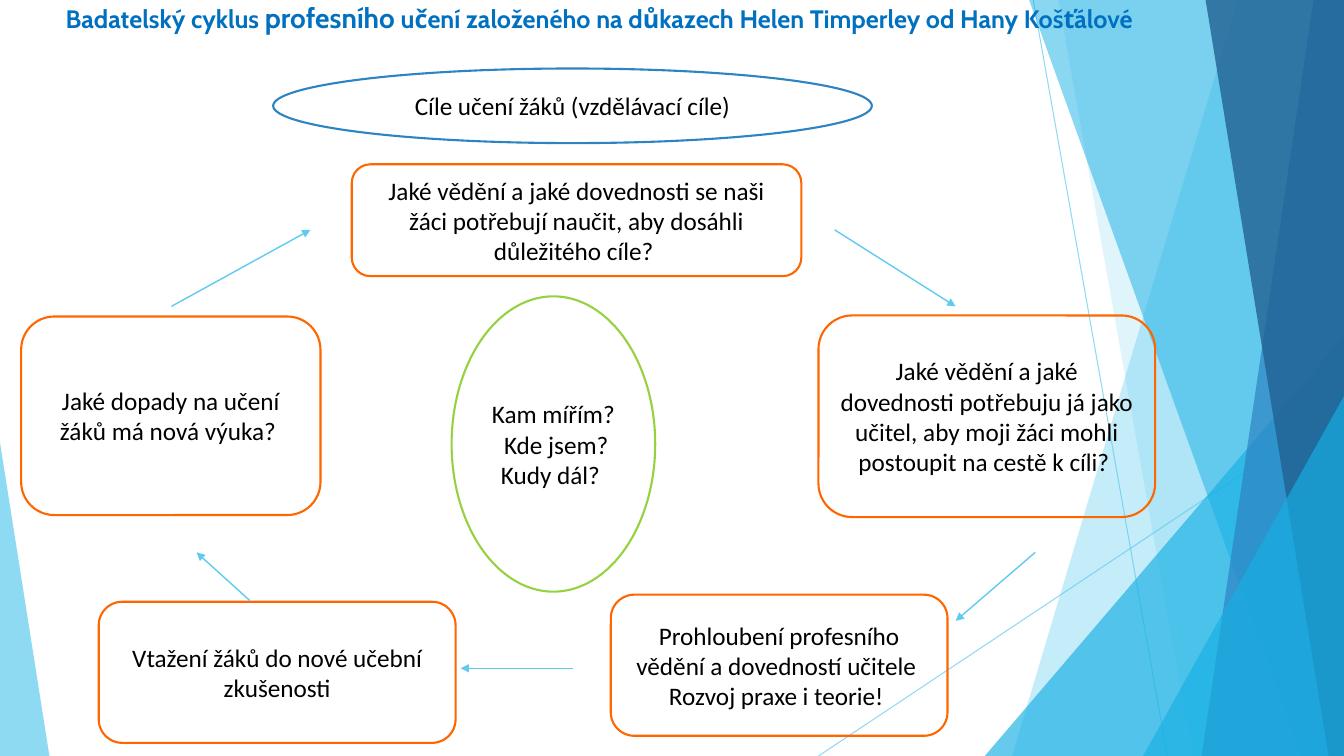
"""Build the slide on the inquiry cycle of evidence-based professional learning."""
from lxml.etree import SubElement
from pptx import Presentation
from pptx.dml.color import RGBColor
from pptx.enum.dml import MSO_LINE_DASH_STYLE as Dash
from pptx.enum.shapes import MSO_CONNECTOR_TYPE as Connector
from pptx.enum.shapes import MSO_AUTO_SHAPE_TYPE as Shape
from pptx.enum.text import MSO_AUTO_SIZE as AutoSize
from pptx.enum.text import MSO_VERTICAL_ANCHOR as Anchor
from pptx.enum.text import PP_PARAGRAPH_ALIGNMENT as Align
from pptx.oxml.ns import qn
from pptx.util import Inches, Pt

CELL = Inches(0.1)
COLUMNS, ROWS = 133.33, 75

WHITE = RGBColor(0xFF, 0xFF, 0xFF)
BLACK = RGBColor(0x00, 0x00, 0x00)
TITLE_BLUE = RGBColor(0x00, 0x70, 0xC0)
SKY = RGBColor(0x5F, 0xCB, 0xEF)
CYAN = RGBColor(0x17, 0xB0, 0xE4)
BLUE = RGBColor(0x2E, 0x83, 0xC3)
NAVY = RGBColor(0x22, 0x62, 0x92)
ORANGE = RGBColor(0xFF, 0x66, 0x00)
GREEN = RGBColor(0x96, 0xD1, 0x41)

BODY_FONT = {"name": "Calibri", "size": Pt(18)}
TITLE_FONT = {"name": "Cabin", "size": Pt(18), "bold": True}
TITLE_RUNS = [
    ("Badatelský cyklus ", {}),
    ("profesního", {"size": Pt(20)}),
    (" učení založeného na důkazech Helen Timperley od Hany Košťálové", {}),
]

FACET_LINES = [((102.5, 0), (115.8, ROWS)), ((COLUMNS, 40.3), (81.2, ROWS))]
FACETS = [
    ([(122.8, 0), (COLUMNS, 0), (COLUMNS, ROWS), (100.4, ROWS)], SKY, 36),
    ([(105, 0), (COLUMNS, 0), (COLUMNS, ROWS), (118.3, ROWS)], SKY, 20),
    ([(COLUMNS, 33.3), (COLUMNS, ROWS), (97.7, ROWS)], CYAN, 66),
    ([(102.1, 0), (COLUMNS, 0), (COLUMNS, ROWS), (129.1, ROWS)], CYAN, 50),
    ([(130.3, 0), (COLUMNS, 0), (COLUMNS, ROWS), (119.2, ROWS)], BLUE, 70),
    ([(119.6, 0), (COLUMNS, 0), (COLUMNS, ROWS), (131.8, ROWS)], NAVY, 80),
    ([(COLUMNS, 39.3), (COLUMNS, ROWS), (113.4, ROWS)], CYAN, 66),
    ([(0, 43.9), (4.9, ROWS), (0, ROWS)], SKY, 70),
]

NODES = [
    (Shape.OVAL, (27.1, 6.8, 59.4, 7.4), BLUE,
     ["Cíle učení žáků (vzdělávací cíle)"]),
    (Shape.ROUNDED_RECTANGLE, (34.9, 16.3, 44.6, 11.1), ORANGE,
     ["Jaké vědění a jaké dovednosti se naši žáci potřebují naučit, "
      "aby dosáhli důležitého cíle? "]),
    (Shape.ROUNDED_RECTANGLE, (81.2, 31.3, 33.4, 20), ORANGE,
     ["Jaké vědění a jaké dovednosti potřebuju já jako učitel, "
      "aby moji žáci mohli postoupit na cestě k cíli? "]),
    (Shape.ROUNDED_RECTANGLE, (60.6, 59, 33.4, 14), ORANGE,
     ["Prohloubení profesního vědění a dovedností učitele ",
      "Rozvoj praxe i teorie! "]),
    (Shape.ROUNDED_RECTANGLE, (9.8, 59.7, 35.4, 14), ORANGE,
     ["Vtažení žáků do nové učební zkušenosti"]),
    (Shape.ROUNDED_RECTANGLE, (2.1, 31.4, 29.7, 19.7), ORANGE,
     ["Jaké dopady na učení žáků má nová výuka? "]),
    (Shape.OVAL, (44.8, 29.4, 20.2, 29.3), GREEN,
     ["Kam mířím?", " Kde jsem? Kudy dál? "]),
]

ARROWS = [
    ((82.8, 22.8), (94.8, 30.4)),
    ((102.7, 54.8), (94.8, 61.6)),
    ((56.8, 66.3), (45.7, 66.3)),
    ((24.8, 59.6), (19.5, 54.8)),
    ((17, 30.4), (30.8, 22.8)),
]


def grid(*cells):
    """Turn counts of grid cells into lengths."""
    return [round(count * CELL) for count in cells]


def set_format(target, values):
    """Set each named attribute of the target."""
    for name, value in values.items():
        setattr(target, name, value)


def set_opacity(color_parent, percent):
    """Make the solid fill under an element partly transparent."""
    color = color_parent.find(qn("a:solidFill"))[0]
    SubElement(color, qn("a:alpha"), val=str(percent * 1000))


def add_line(slide, start, end, width):
    """Draw a straight sky-blue line without shadow and return its stroke."""
    line = slide.shapes.add_connector(Connector.STRAIGHT, *grid(*start, *end))
    line.line.color.rgb = SKY
    set_format(line.line, {"width": Pt(width), "dash_style": Dash.SOLID})
    properties = line._element.spPr
    SubElement(properties, qn("a:effectLst"))
    return properties.find(qn("a:ln"))


def add_facet(slide, corners, color, opacity):
    """Draw a translucent polygon of the background."""
    points = [grid(*corner) for corner in corners]
    builder = slide.shapes.build_freeform(*points[0])
    builder.add_line_segments(points[1:], close=True)
    facet = builder.convert_to_shape()
    facet.shadow.inherit = False
    facet.fill.solid()
    facet.fill.fore_color.rgb = color
    set_opacity(facet._element.spPr, opacity)
    facet.line.fill.background()


def add_run(paragraph, text, font, color):
    """Append formatted text to a paragraph."""
    run = paragraph.add_run()
    run.text = text
    set_format(run.font, font)
    run.font.color.rgb = color


def add_title(slide):
    """Write the heading across the top."""
    title = slide.shapes.add_textbox(*grid(1.1, -0.4, 116.7, 4.4))
    set_format(title.text_frame, {
        "word_wrap": True, "auto_size": AutoSize.SHAPE_TO_FIT_TEXT})
    paragraph = title.text_frame.paragraphs[0]
    paragraph.alignment = Align.CENTER
    for text, changes in TITLE_RUNS:
        add_run(paragraph, text, TITLE_FONT | changes, TITLE_BLUE)


def add_node(slide, kind, place, color, lines):
    """Draw an outlined shape with centred text."""
    node = slide.shapes.add_shape(kind, *grid(*place))
    node.shadow.inherit = False
    node.fill.background()
    node.line.color.rgb = color
    node.line.width = Pt(1.5)
    frame = node.text_frame
    set_format(frame, {"word_wrap": True, "vertical_anchor": Anchor.MIDDLE})
    for index, text in enumerate(lines):
        paragraph = frame.add_paragraph() if index else frame.paragraphs[0]
        paragraph.alignment = Align.CENTER
        add_run(paragraph, text, BODY_FONT, BLACK)


def main():
    """Assemble and save the presentation."""
    presentation = Presentation()
    width, height = grid(COLUMNS, ROWS)
    set_format(presentation, {"slide_width": width, "slide_height": height})
    slide = presentation.slides.add_slide(presentation.slide_layouts[6])
    slide.background.fill.solid()
    slide.background.fill.fore_color.rgb = WHITE
    for start, end in FACET_LINES:
        set_opacity(add_line(slide, start, end, 0.75), 70)
    for facet in FACETS:
        add_facet(slide, *facet)
    add_title(slide)
    for node in NODES:
        add_node(slide, *node)
    for start, end in ARROWS:
        SubElement(add_line(slide, start, end, 1), qn("a:tailEnd"), type="triangle")
    presentation.save("out.pptx")


if __name__ == "__main__":
    main()
